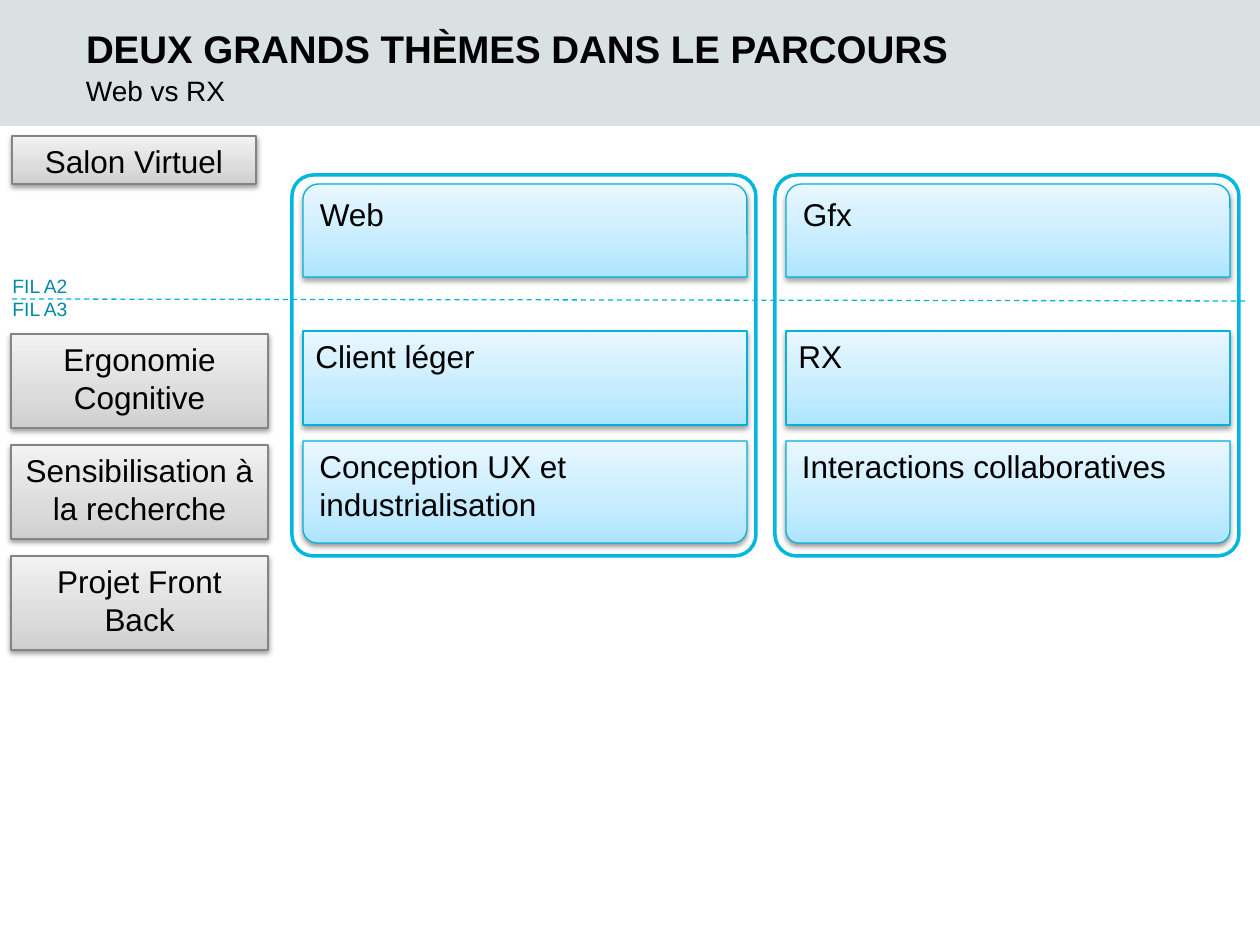
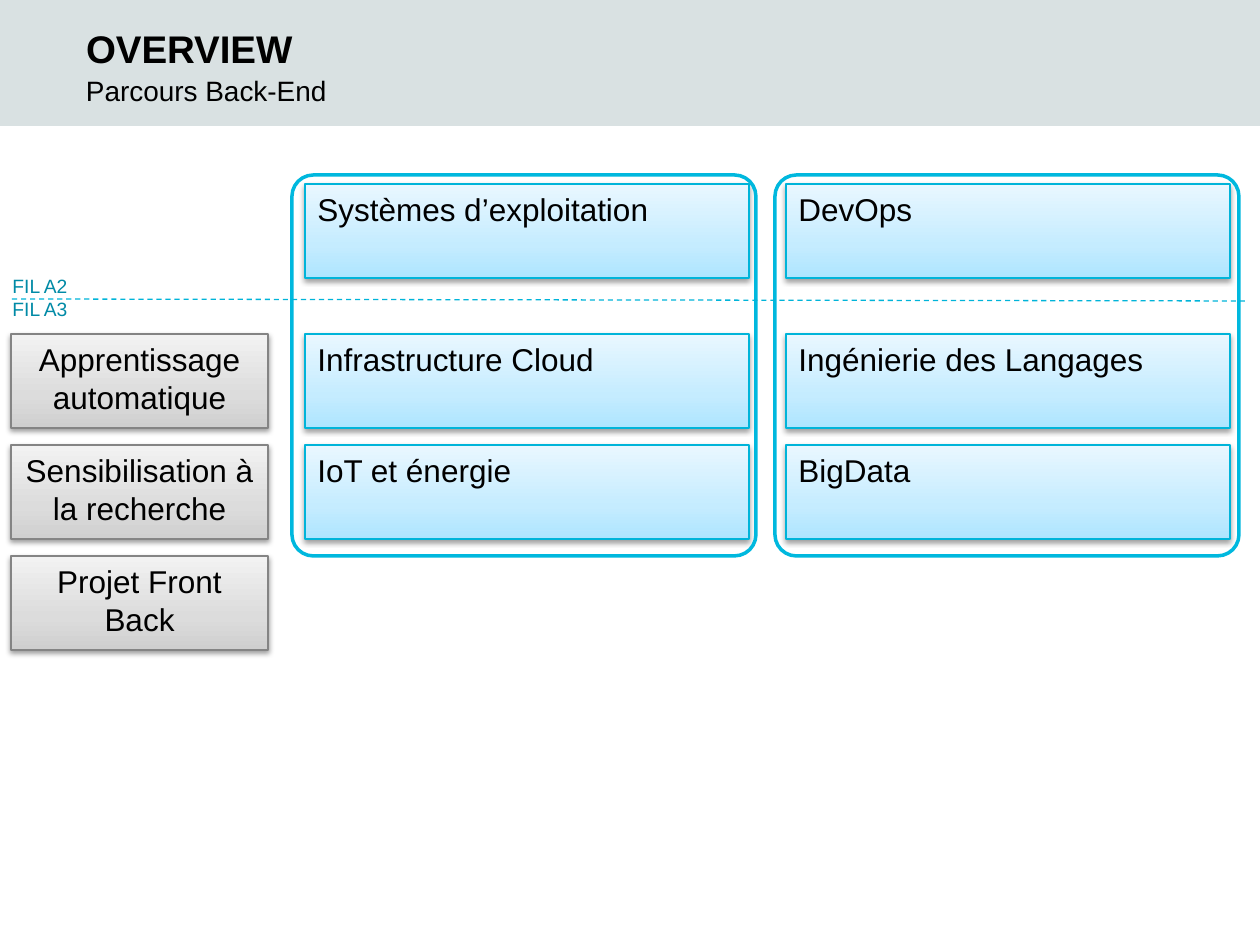
import copy

from lxml import etree
from pptx import Presentation
from pptx import util as u
from pptx.dml.color import RGBColor
from pptx.enum import dml, shapes, text
from pptx.oxml import ns

PX = 914400 / 126
FONT = "Arial"
BLACK = RGBColor(0x00, 0x00, 0x00)
BAND = RGBColor(0xD9, 0xE1, 0xE2)
FRAME_LINE = RGBColor(0x00, 0xB8, 0xDE)
CYAN = RGBColor(0x00, 0xB4, 0xD9)
TEAL = RGBColor(0x00, 0x8A, 0xA6)
GREY = RGBColor(0x84, 0x84, 0x84)
BLUE_STOPS = (RGBColor(0xAD, 0xE5, 0xFF), RGBColor(0xC5, 0xEC, 0xFF), RGBColor(0xE9, 0xF7, 0xFF))
GREY_STOPS = (RGBColor(0xCF, 0xCF, 0xCF), RGBColor(0xDC, 0xDC, 0xDC), RGBColor(0xF2, 0xF2, 0xF2))
STOP_POSITIONS = (0, 0.35, 1)

RECTANGLE = shapes.MSO_SHAPE.RECTANGLE
ROUNDED = shapes.MSO_SHAPE.ROUNDED_RECTANGLE
TWO_ROUNDED = shapes.MSO_SHAPE.ROUND_2_SAME_RECTANGLE
LEFT, CENTER = text.PP_ALIGN.LEFT, text.PP_ALIGN.CENTER

TOP_CORNERS = (0.167, 0)
SQUARE = None
FRAME_LEFTS = (292, 775)
COMMON_TOP, COMMON_PITCH = 334, 111


def emu(*lengths):
    return [u.Emu(round(length * PX)) for length in lengths]


def write(shape, words, size, color=BLACK, bold=False, align=LEFT):
    frame = shape.text_frame
    frame.text = words
    for paragraph in frame.paragraphs:
        paragraph.alignment = align
        for run in paragraph.runs:
            run.font.name = FONT
            run.font.size = u.Pt(size)
            run.font.bold = bold
            run.font.color.rgb = color


def add_plain_shape(slide, kind, box, corners=None):
    shape = slide.shapes.add_shape(kind, *emu(*box))
    shape.shadow.inherit = False
    for index, corner in enumerate(corners or ()):
        shape.adjustments[index] = corner
    return shape


def fill_gradient(shape, colors):
    shape.fill.gradient()
    shape.fill.gradient_angle = 90
    stop_list = shape.element.spPr.find(".//" + ns.qn("a:gsLst"))
    stop_list.append(copy.deepcopy(stop_list[-1]))
    for stop, color, position in zip(shape.fill.gradient_stops, colors, STOP_POSITIONS):
        stop.color.rgb = color
        stop.position = position


def add_drop_shadow(shape):
    effects = shape.element.spPr.find(ns.qn("a:effectLst"))
    shadow = etree.SubElement(effects, ns.qn("a:outerShdw"), blurRad=str(u.Pt(3.1)),
                              dist=str(u.Pt(1.6)), dir="5400000", rotWithShape="0")
    color = etree.SubElement(shadow, ns.qn("a:srgbClr"), val="000000")
    etree.SubElement(color, ns.qn("a:alpha"), val="38000")


def add_card(slide, words, box, stops, line_color, align=LEFT, corners=SQUARE):
    card = add_plain_shape(slide, TWO_ROUNDED if corners else RECTANGLE, box, corners)
    fill_gradient(card, stops)
    card.line.color.rgb = line_color
    card.line.width = u.Pt(0.75)
    add_drop_shadow(card)
    card.text_frame.word_wrap = True
    card.text_frame.vertical_anchor = text.MSO_ANCHOR.TOP
    write(card, words, 18, align=align)


def add_course(slide, words, box, corners=SQUARE):
    add_card(slide, words, box, BLUE_STOPS, CYAN, corners=corners)


def add_common_course(slide, words, box):
    add_card(slide, words, box, GREY_STOPS, GREY, CENTER)


def add_heading(slide, words, box, size, anchor, bold=False):
    heading = slide.shapes.add_textbox(*emu(*box))
    frame = heading.text_frame
    frame.word_wrap = True
    frame.vertical_anchor = anchor
    frame.margin_left = frame.margin_right = frame.margin_top = frame.margin_bottom = 0
    write(heading, words, size, bold=bold)


def add_frame(slide, left):
    frame = add_plain_shape(slide, ROUNDED, (left, 175, 464, 381), (0.056,))
    frame.fill.background()
    frame.line.color.rgb = FRAME_LINE
    frame.line.width = u.Pt(2)


def add_year_divider(slide):
    divider = slide.shapes.add_connector(shapes.MSO_CONNECTOR.STRAIGHT, *emu(1245, 301, 12, 299))
    divider.line.color.rgb = CYAN
    divider.line.width = u.Pt(0.75)
    divider.line.dash_style = dml.MSO_LINE.DASH
    etree.SubElement(divider.element.spPr, ns.qn("a:effectLst"))
    years = slide.shapes.add_textbox(*emu(0, 268, 83, 59))
    years.text_frame.word_wrap = False
    years.text_frame.auto_size = text.MSO_AUTO_SIZE.SHAPE_TO_FIT_TEXT
    write(years, "FIL A2\nFIL A3", 11, TEAL)


def add_course_slide(presentation, title, subtitle, common_courses, lefts, rows):
    slide = presentation.slides.add_slide(presentation.slide_layouts[6])
    band = add_plain_shape(slide, RECTANGLE, (0, 0, 1260, 126))
    band.fill.solid()
    band.fill.fore_color.rgb = BAND
    band.line.fill.background()
    add_heading(slide, title, (86, 0, 966, 71), 22, text.MSO_ANCHOR.BOTTOM, bold=True)
    add_heading(slide, subtitle, (86, 74, 968, 50), 16, text.MSO_ANCHOR.TOP)
    for top, height, corners, names in rows:
        for left, name, corner in zip(lefts, names, corners):
            add_course(slide, name, (left, top, 444, height), corner)
    for index, name in enumerate(common_courses):
        add_common_course(slide, name, (11, COMMON_TOP + index * COMMON_PITCH, 257, 94))
    for left in FRAME_LEFTS:
        add_frame(slide, left)
    add_year_divider(slide)
    return slide


def main():
    presentation = Presentation()
    presentation.slide_width, presentation.slide_height = emu(1260, 945)
    shared = ["Sensibilisation à la recherche", "Projet Front Back"]
    squares = (SQUARE, SQUARE)

    themes = add_course_slide(
        presentation, "DEUX GRANDS THÈMES DANS LE PARCOURS", "Web vs RX",
        ["Ergonomie Cognitive"] + shared, (303, 786), [
            (184, 93, (TOP_CORNERS, TOP_CORNERS), ("Web", "Gfx")),
            (331, 94, squares, ("Client léger", "RX")),
            (441, 102, ((0, 0.138), (0, 0.12)),
             ("Conception UX et industrialisation", "Interactions collaboratives")),
        ])
    add_common_course(themes, "Salon Virtuel", (12, 136, 244, 48))

    add_course_slide(
        presentation, "OVERVIEW", "Parcours Back-End",
        ["Apprentissage automatique"] + shared, (305, 786), [
            (184, 94, squares, ("Systèmes d’exploitation", "DevOps")),
            (334, 94, squares, ("Infrastructure Cloud", "Ingénierie des Langages")),
            (445, 94, squares, ("IoT et énergie", "BigData")),
        ])
    presentation.save("out.pptx")


if __name__ == "__main__":
    main()
